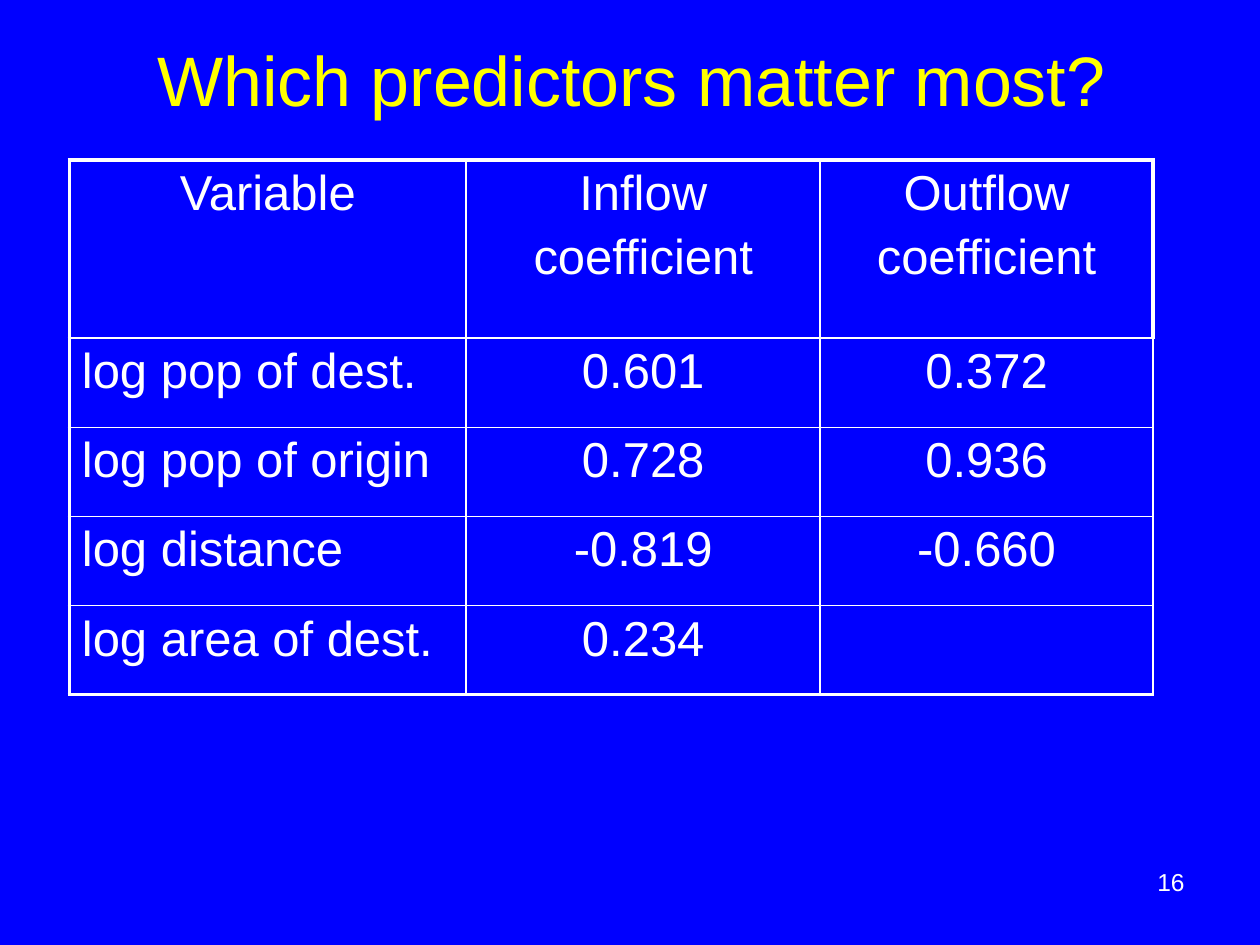
from lxml.etree import SubElement
from pptx import Presentation
from pptx.dml.color import RGBColor
from pptx.enum.text import MSO_ANCHOR, PP_ALIGN
from pptx.oxml.ns import qn
from pptx.util import Pt

FONT, WHITE, YELLOW, BLUE = "Arial", "FFFFFF", "FFFF00", "0000FF"
THIN, THICK = 1, 2.25
LEFT, MID, RIGHT = PP_ALIGN.LEFT, PP_ALIGN.CENTER, PP_ALIGN.RIGHT

ROWS = [
    ("Variable", "Inflow\ncoefficient", "Outflow\ncoefficient"),
    ("log pop of dest.", "0.601", "0.372"),
    ("log pop of origin", "0.728", "0.936"),
    ("log distance", "-0.819", "-0.660"),
    ("log area of dest.", "0.234", ""),
]


def color(code):
    return RGBColor.from_string(code)


def write(frame, text, size=28, fill=WHITE, align=MID, before=0):
    """Put each line of the text in a paragraph of its own."""
    frame.word_wrap = True
    for i, line in enumerate(text.split("\n")):
        para = frame.paragraphs[0] if i == 0 else frame.add_paragraph()
        para.alignment = align
        para.space_before = Pt(before)
        para.font.size = Pt(size)
        if line:
            run = para.add_run()
            run.text = line
            run.font.name, run.font.size = FONT, Pt(size)
            run.font.color.rgb = color(fill)


def label(slide, box, text, anchor=MSO_ANCHOR.TOP, **style):
    frame = slide.shapes.add_textbox(*map(Pt, box)).text_frame
    write(frame, text, **style)
    frame.vertical_anchor = anchor


def edge(cell, **widths):
    """Draw the cell's borders, given as L, R, T and B widths."""
    props = cell._tc.get_or_add_tcPr()
    for side, width in widths.items():
        line = SubElement(props, qn(f"a:ln{side}"), w=str(Pt(width)))
        fill = SubElement(line, qn("a:solidFill"))
        SubElement(fill, qn("a:srgbClr"), val=WHITE)


def grid(slide, box, rows):
    left, top, width, height = box
    count = len(rows)
    table = slide.shapes.add_table(count, len(rows[0]), *map(Pt, box)).table
    table.first_row = table.horz_banding = False

    # The header is twice as high as the other rows
    unit = height / (count + 1)
    for r, row in enumerate(table.rows):
        row.height = Pt(unit * (1 if r else 2))
    wide, mid = 226.8, 202.3
    for col, size in zip(table.columns, (wide, mid, width - wide - mid)):
        col.width = Pt(size)

    # Cells, with a thick frame that thins out at the right below the header
    for r, row in enumerate(rows):
        for c, text in enumerate(row):
            cell = table.cell(r, c)
            write(cell.text_frame, text, before=5.6,
                  align=LEFT if r and not c else MID)
            edge(cell,
                 L=THIN if c else THICK,
                 R=THICK if r == 0 and c == len(row) - 1 else THIN,
                 T=THIN if r else THICK,
                 B=THICK if r == count - 1 else THIN)
            cell.fill.background()


def main():
    deck = Presentation()
    deck.slide_width, deck.slide_height = Pt(720), Pt(540)
    slide = deck.slides.add_slide(deck.slide_layouts[6])
    back = slide.background.fill
    back.solid()
    back.fore_color.rgb = color(BLUE)

    # Title, table and page number
    label(slide, (36.7, 0, 648, 90), "Which predictors matter most?",
          anchor=MSO_ANCHOR.MIDDLE, size=40, fill=YELLOW)
    grid(slide, (39.6, 91.4, 619.2, 305.6), ROWS)
    label(slide, (516, 492, 168, 37.5), "16", size=14, align=RIGHT)
    deck.save("out.pptx")


if __name__ == "__main__":
    main()
